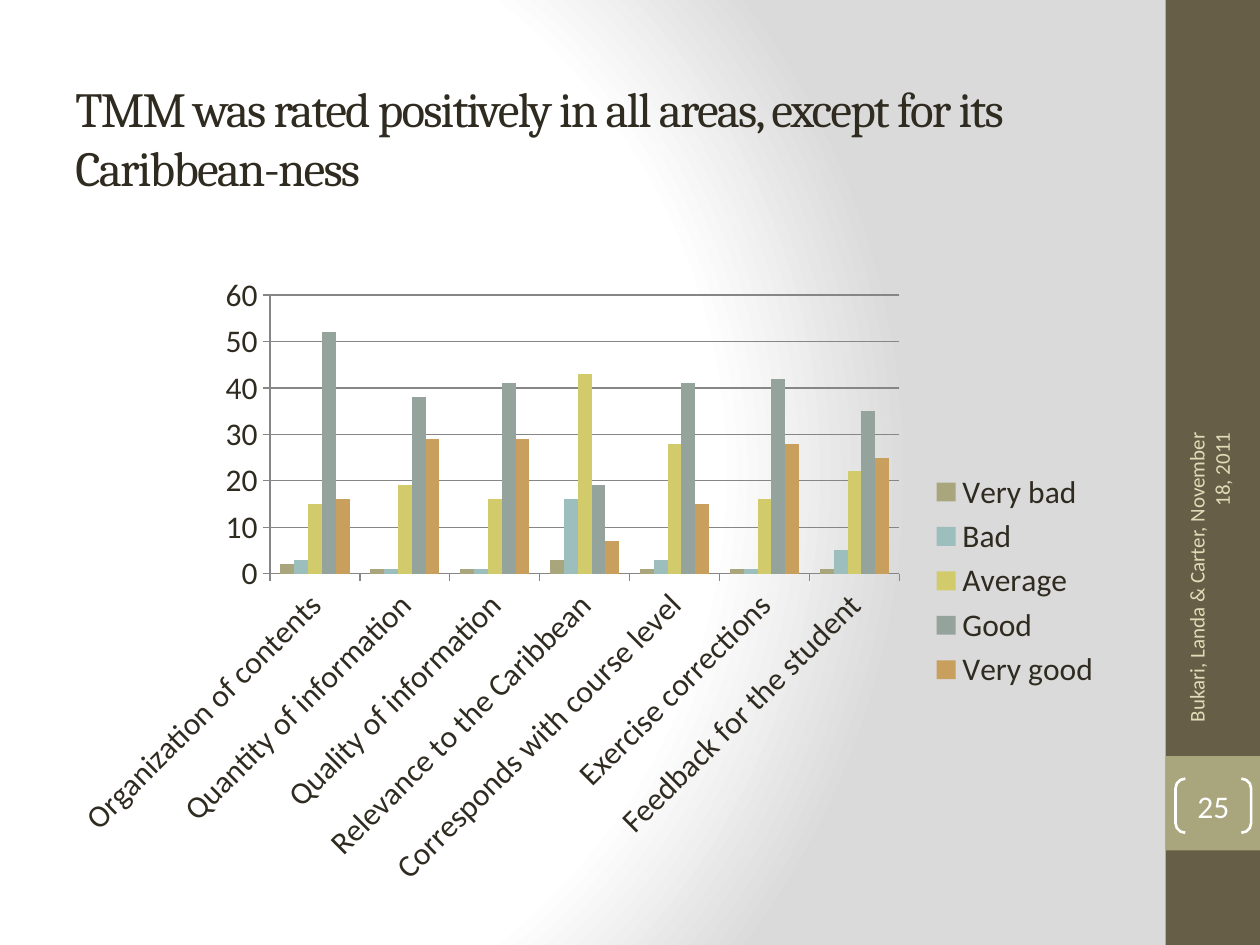
from dataclasses import dataclass
from typing import Any

from pptx import Presentation
from pptx.chart.data import CategoryChartData
from pptx.dml.color import RGBColor
from pptx.enum.chart import XL_CHART_TYPE, XL_LEGEND_POSITION, XL_TICK_MARK
from pptx.enum.shapes import MSO_SHAPE
from pptx.enum.text import MSO_ANCHOR, PP_ALIGN
from pptx.oxml import parse_xml
from pptx.oxml.ns import nsdecls
from pptx.util import Inches, Pt

INK, WHITE, GRID = "2F2B20", "FFFFFF", "868686"


@dataclass
class Box:
    left: float
    top: float
    width: float
    height: float

    def emu(self) -> tuple:
        return tuple(Inches(v) for v in (self.left, self.top, self.width, self.height))


@dataclass
class Panel:
    box: Box
    fill: str


@dataclass
class Label:
    text: str
    size: int
    font: str
    color: str
    align: Any


@dataclass
class Rating:
    name: str
    color: str
    counts: tuple


PANELS = [
    Panel(Box(9.25, 0, 0.75, 7.5), "675E47"),
    Panel(Box(9.25, 6, 0.75, 0.75), "A9A57C"),
]
AREAS = [
    "Organization of contents",
    "Quantity of information",
    "Quality of information",
    "Relevance to the Caribbean",
    "Corresponds with course level",
    "Exercise corrections",
    "Feedback for the student",
]
RATINGS = [
    Rating("Very bad", "A9A57C", (2, 1, 1, 3, 1, 1, 1)),
    Rating("Bad", "9CBEBD", (3, 1, 1, 16, 3, 1, 5)),
    Rating("Average", "D2CB6C", (15, 19, 16, 43, 28, 16, 22)),
    Rating("Good", "95A39D", (52, 38, 41, 19, 41, 42, 35)),
    Rating("Very good", "C89F5D", (16, 29, 29, 7, 15, 28, 25)),
]


def apply(item: Any, values: dict) -> None:
    for name, value in values.items():
        setattr(item, name, value)


def paint(target: Any, color: str) -> None:
    if hasattr(target, "solid"):
        target.solid()
        target = target.fore_color
    elif hasattr(target, "color"):
        target = target.color
    target.rgb = RGBColor.from_string(color)


def stroke(line: Any, color: str, width: float) -> None:
    paint(line.fill, color)
    line.width = Pt(width)


def write(shape: Any, label: Label, frame: dict) -> Any:
    body = shape.text_frame
    apply(body, {"word_wrap": True, "vertical_anchor": MSO_ANCHOR.MIDDLE} | frame)
    para = body.paragraphs[0]
    para.alignment = label.align
    run = para.add_run()
    run.text = label.text
    apply(run.font, {"size": Pt(label.size), "name": label.font})
    paint(run.font, label.color)
    return run


def shade(slide: Any) -> None:
    stops = "".join(
        f'<a:gs pos="{pos * 1000}"><a:srgbClr val="{color}"/></a:gs>'
        for pos, color in ((0, WHITE), (75, WHITE), (100, "DADADA"))
    )
    back = parse_xml(
        f'<p:bg {nsdecls("p", "a")}><p:bgPr><a:gradFill rotWithShape="1">'
        f'<a:gsLst>{stops}</a:gsLst><a:path path="circle">'
        '<a:fillToRect l="20000" t="50000" r="100000" b="50000"/></a:path>'
        "</a:gradFill><a:effectLst/></p:bgPr></p:bg>"
    )
    slide.element.cSld.insert(0, back)


def add_panel(slide: Any, panel: Panel) -> None:
    shape = slide.shapes.add_shape(MSO_SHAPE.RECTANGLE, *panel.box.emu())
    shape.shadow.inherit = False
    paint(shape.fill, panel.fill)
    shape.line.fill.background()


def add_title(slide: Any) -> None:
    shape = slide.shapes.add_textbox(*Box(0.5, 0.52, 8.33, 1.34).emu())
    text = "TMM was rated positively in all areas, except for its Caribbean-ness"
    label = Label(text, 28, "Cambria", INK, PP_ALIGN.LEFT)
    run = write(shape, label, {"margin_bottom": Inches(0.25)})
    run.font._element.set("spc", "-100")


def add_ratings(slide: Any) -> None:
    data = CategoryChartData()
    data.categories = AREAS
    for rating in RATINGS:
        data.add_series(rating.name, rating.counts)
    box = Box(0.5, 2.09, 8.34, 5.04)
    kind = XL_CHART_TYPE.COLUMN_CLUSTERED
    chart = slide.shapes.add_chart(kind, *box.emu(), data).chart
    apply(chart, {"has_title": False, "has_legend": True})
    apply(chart.font, {"size": Pt(18), "name": "Calibri"})
    paint(chart.font, INK)
    legend = {"position": XL_LEGEND_POSITION.RIGHT, "include_in_layout": False}
    apply(chart.legend, legend)
    plot = chart.plots[0]
    apply(plot, {"gap_width": 150, "overlap": 0, "vary_by_categories": False})
    for bars, rating in zip(plot.series, RATINGS):
        paint(bars.format.fill, rating.color)
    ticks = {"major_tick_mark": XL_TICK_MARK.OUTSIDE, "minor_tick_mark": XL_TICK_MARK.NONE}
    for axis in (chart.category_axis, chart.value_axis):
        apply(axis, ticks)
        stroke(axis.format.line, GRID, 0.75)
    scale = {"minimum_scale": 0, "maximum_scale": 60, "major_unit": 10}
    apply(chart.value_axis, scale | {"has_major_gridlines": True})
    stroke(chart.value_axis.major_gridlines.format.line, GRID, 0.75)


def add_footer(slide: Any) -> None:
    shape = slide.shapes.add_textbox(*Box(8.3, 4.43, 2.59, 0.4).emu())
    shape.rotation = 270
    text = "Bukari, Landa & Carter, November 18, 2011"
    write(shape, Label(text, 12, "Calibri", "DFDCB7", PP_ALIGN.RIGHT), {})


def add_number(slide: Any) -> None:
    box = Box(9.33, 6.18, 0.6, 0.43)
    shape = slide.shapes.add_shape(MSO_SHAPE.DOUBLE_BRACKET, *box.emu())
    shape.shadow.inherit = False
    shape.adjustments[0] = 0.18
    shape.fill.background()
    stroke(shape.line, WHITE, 1.5)
    sides = ("left", "top", "right", "bottom")
    label = Label("25", 18, "Calibri", WHITE, PP_ALIGN.CENTER)
    write(shape, label, {f"margin_{side}": 0 for side in sides})


def main() -> None:
    deck = Presentation()
    apply(deck, {"slide_width": Inches(10), "slide_height": Inches(7.5)})
    slide = deck.slides.add_slide(deck.slide_layouts[6])
    shade(slide)
    for panel in PANELS:
        add_panel(slide, panel)
    for draw in (add_title, add_ratings, add_footer, add_number):
        draw(slide)
    deck.save("out.pptx")


if __name__ == "__main__":
    main()
